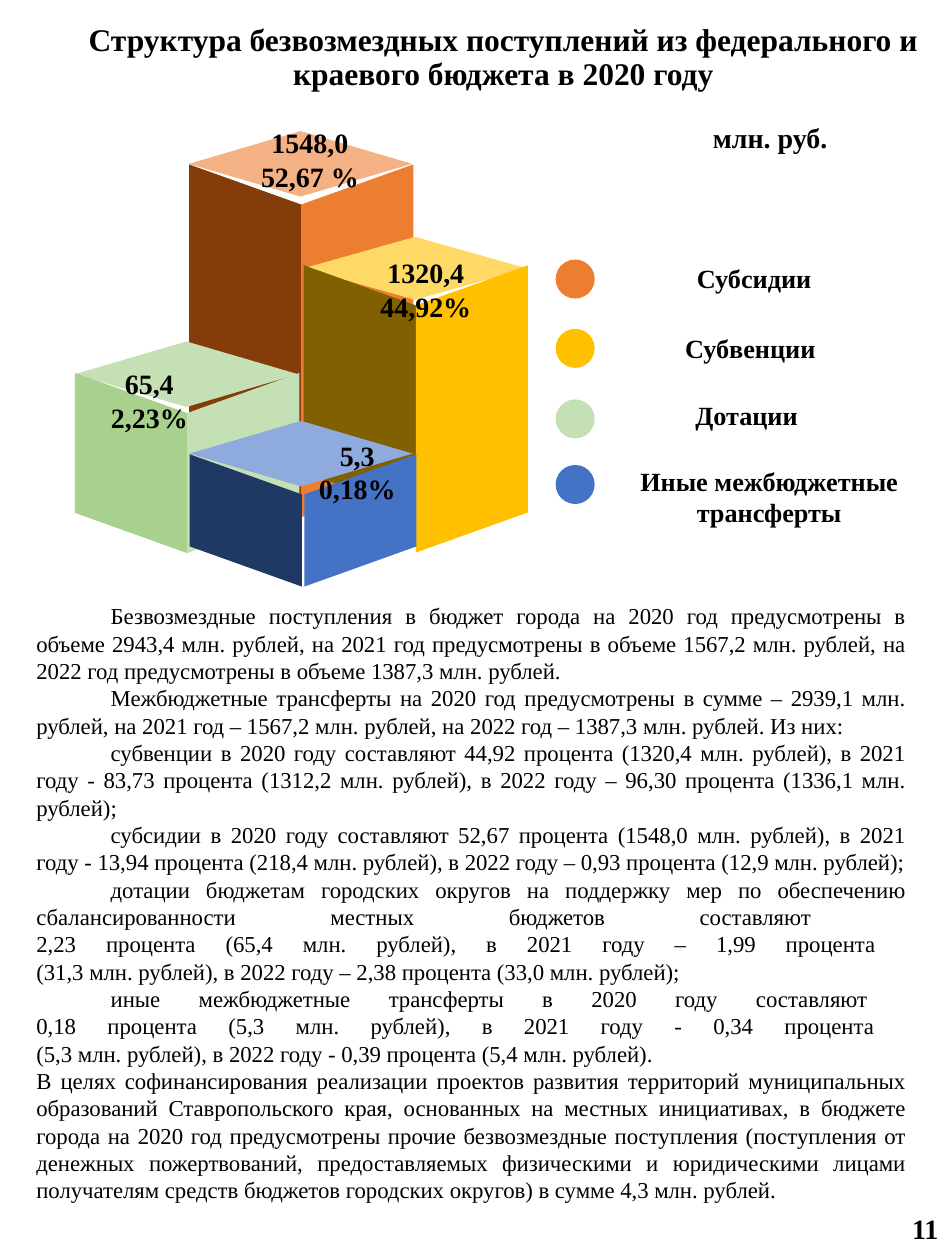
from pptx import Presentation
from pptx.dml import color
from pptx.enum import shapes, text
from pptx.util import Inches, Pt

COLS, ROWS = 75, 100
KIND = shapes.MSO_SHAPE
ALIGN = text.PP_ALIGN


def paint(code):
    return color.RGBColor.from_string(code)


class Board:
    font = "Times New Roman"
    ink = "000000"
    side = 8.9
    slant = 0.358

    def __init__(self):
        self.deck = Presentation()
        self.deck.slide_width = Inches(7.5)
        self.deck.slide_height = Inches(10)
        self.slide = self.deck.slides.add_slide(self.deck.slide_layouts[6])

    def box(self, x, y, w, h):
        wide, high = self.deck.slide_width, self.deck.slide_height
        return (round(x * wide / COLS), round(y * high / ROWS),
                round(w * wide / COLS), round(h * high / ROWS))

    def form(self, kind, x, y, w, h, fill):
        item = self.slide.shapes.add_shape(kind, *self.box(x, y, w, h))
        item.shadow.inherit = False
        item.fill.solid()
        item.fill.fore_color.rgb = paint(fill)
        item.line.fill.background()
        return item

    def face(self, x, y, high, fill, flip):
        left = x + (self.side - high) / 2
        top = y + (high - self.side) / 2
        item = self.form(KIND.PARALLELOGRAM, left, top, high, self.side, fill)
        item.adjustments[0] = self.slant
        item.rotation = 90
        if flip:
            item._element.spPr.xfrm.set("flipV", "1")

    def block(self, x, lid, top, highs, fills, deep=5.2, gap=0):
        self.form(KIND.FLOWCHART_DECISION, x, lid, 17.7, deep, fills[0])
        self.face(x, top, highs[0], fills[1], False)
        self.face(x + self.side + gap, top, highs[1], fills[2], True)

    def dot(self, y, fill):
        self.form(KIND.OVAL, 44.1, y, 3.1, 3.1, fill)

    def words(self, place, lines, size, bold=True, align=ALIGN.CENTER, grow=True):
        item = self.slide.shapes.add_textbox(*self.box(*place))
        frame = item.text_frame
        frame.word_wrap = True
        if grow:
            frame.auto_size = text.MSO_AUTO_SIZE.SHAPE_TO_FIT_TEXT
        for i, line in enumerate(lines):
            para = frame.add_paragraph() if i else frame.paragraphs[0]
            para.text = line
            para.alignment = align
            para.font.size = Pt(size)
            for run in para.runs:
                run.font.name = self.font
                run.font.size = Pt(size)
                run.font.bold = bold
                run.font.color.rgb = paint(self.ink)
        return frame

    def title(self, place, line):
        frame = self.words(place, [line], 18, grow=False)
        frame.vertical_anchor = text.MSO_ANCHOR.MIDDLE
        frame.margin_left = frame.margin_right = Inches(0.07)
        frame.margin_top = frame.margin_bottom = Inches(0.04)
        frame.paragraphs[0].line_spacing = 0.9

    def body(self, place, lines):
        frame = self.words(place, lines, 13, False, ALIGN.JUSTIFY)
        for para in frame.paragraphs[:-1]:
            para._p.get_or_add_pPr().set("indent", str(Inches(0.59)))


BODY = [
    "Безвозмездные поступления в бюджет города на 2020 год предусмотрены в объеме "
    "2943,4 млн. рублей, на 2021 год предусмотрены в объеме 1567,2 млн. рублей, "
    "на 2022 год предусмотрены в объеме 1387,3 млн. рублей. ",
    "Межбюджетные трансферты на 2020 год предусмотрены в сумме – 2939,1 млн. рублей, "
    "на 2021 год – 1567,2 млн. рублей, на 2022 год – 1387,3 млн. рублей. Из них:",
    "субвенции в 2020 году составляют 44,92 процента (1320,4 млн. рублей), "
    "в 2021 году - 83,73 процента (1312,2 млн. рублей), "
    "в 2022 году – 96,30 процента (1336,1 млн. рублей);",
    "субсидии в 2020 году составляют 52,67 процента (1548,0 млн. рублей), "
    "в 2021 году - 13,94 процента (218,4 млн. рублей), "
    "в 2022 году – 0,93 процента (12,9 млн. рублей);",
    "дотации бюджетам городских округов на поддержку мер по обеспечению "
    "сбалансированности местных бюджетов составляют \n"
    "2,23 процента (65,4 млн. рублей), в 2021 году – 1,99 процента \n"
    "(31,3 млн. рублей), в 2022 году – 2,38 процента (33,0 млн. рублей);",
    "иные межбюджетные трансферты в 2020 году составляют \n"
    "0,18 процента (5,3 млн. рублей), в 2021 году - 0,34 процента \n"
    "(5,3 млн. рублей), в 2022 году - 0,39 процента (5,4 млн. рублей).",
    "В целях софинансирования реализации проектов развития территорий муниципальных "
    "образований Ставропольского края, основанных на местных инициативах, в бюджете "
    "города на 2020 год предусмотрены прочие безвозмездные поступления (поступления "
    "от денежных пожертвований, предоставляемых физическими и юридическими лицами "
    "получателям средств бюджетов городских округов) в сумме 4,3 млн. рублей.",
]

LEGEND = [
    (20.6, "ED7D31", (48.9, 20.3, 21.9, 3.5), "Субсидии"),
    (26.1, "FFC000", (48.3, 25.9, 22.5, 3.5), "Субвенции"),
    (31.7, "C5E0B4", (48, 31.2, 22.5, 3.5), "Дотации"),
    (36.9, "4472C4", (48.9, 36.4, 24.3, 6.1), "Иные межбюджетные трансферты"),
]

VALUES = [
    ((18.8, 9.5, 11.6, 6.4), ["1548,0", "52,67 %"]),
    ((28.8, 19.8, 10, 6.4), ["1320,4", "44,92%"]),
    ((4.6, 28.6, 14.5, 6.4), ["65,4", "2,23%"]),
    ((22.9, 34.3, 10.9, 6.4), ["5,3", "0,18%"]),
]


def main():
    board = Board()
    board.block(15, 10.4, 13.05, (28, 28), ("F4B183", "843C0B", "ED7D31"))
    board.block(24.1, 18.8, 21.05, (19.6, 22.8), ("FFD966", "806000", "FFC000"), deep=5)
    board.block(5.95, 27.1, 29.6, (14.3, 14.3), ("C5E0B4", "A9D18E", "C5E0B4"))
    board.block(15.05, 33.4, 36.05, (10.5, 10.5), ("8FAADC", "203864", "4472C4"), gap=0.2)
    for y, fill, place, name in LEGEND:
        board.dot(y, fill)
        board.words(place, [name], 15)
    board.title((6, 1.9, 67.9, 5.5),
                "Структура безвозмездных поступлений из федерального и "
                "краевого бюджета в 2020 году")
    for place, lines in VALUES:
        board.words(place, lines, 16)
    board.words((55.6, 9.1, 13, 3.7), ["млн. руб."], 16, align=ALIGN.LEFT)
    board.body((1.9, 47.3, 70.9, 53.7), BODY)
    board.words((71.4, 95.7, 5.1, 3.7), ["11"], 16, align=ALIGN.LEFT)
    board.deck.save("out.pptx")


if __name__ == "__main__":
    main()
